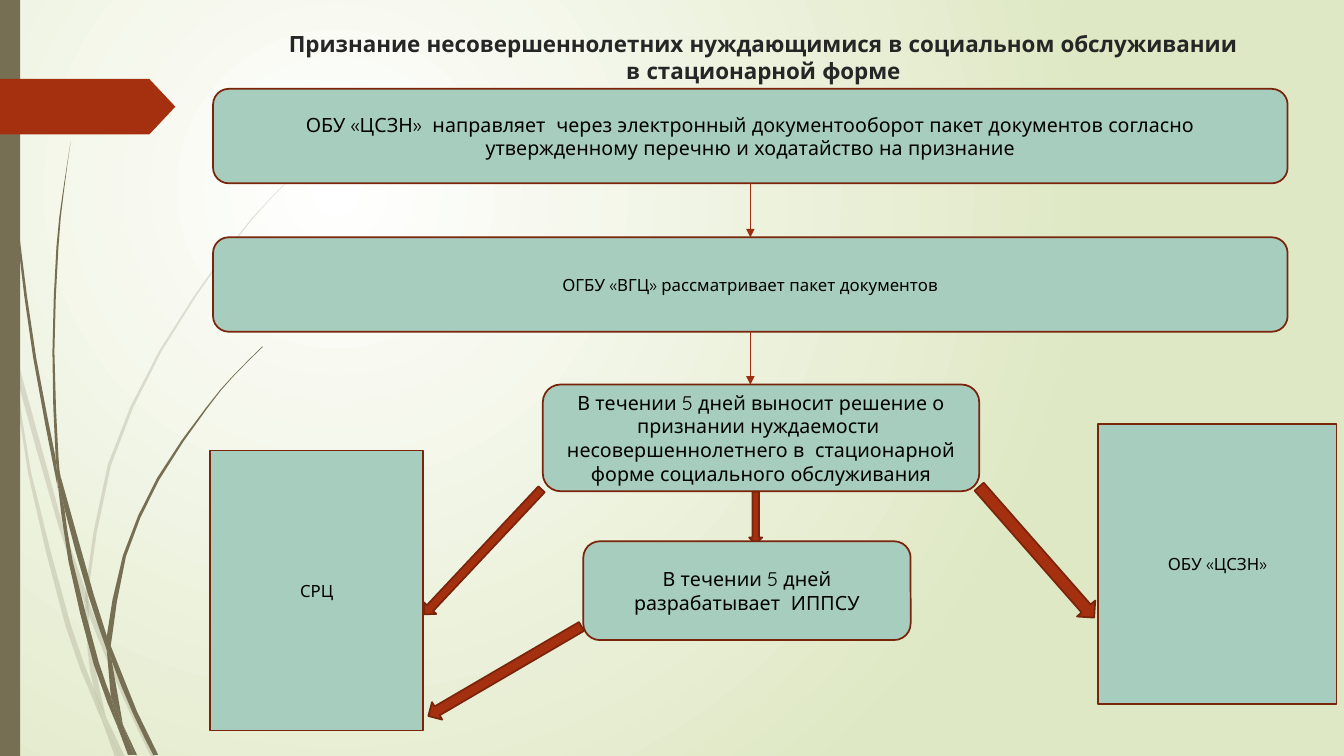
from dataclasses import dataclass

from lxml.etree import SubElement
from pptx import Presentation
from pptx.dml.color import RGBColor as RGB
from pptx.enum.shapes import MSO_CONNECTOR as LINK, MSO_SHAPE as KIND
from pptx.enum.text import MSO_ANCHOR as ANCHOR, PP_ALIGN as ALIGN
from pptx.oxml.ns import qn
from pptx.util import Cm, Pt


@dataclass
class Theme:
    font: str = "Quicksand"
    pale: RGB = RGB(0xFF, 0xFF, 0xFF)
    lime: RGB = RGB(0xDF, 0xE8, 0xC4)
    olive: RGB = RGB(0x76, 0x6F, 0x54)
    rust: RGB = RGB(0xA5, 0x30, 0x10)
    edge: RGB = RGB(0x7A, 0x24, 0x0C)
    wire: RGB = RGB(0x9E, 0x2E, 0x0F)
    mint: RGB = RGB(0xA6, 0xCD, 0xBD)
    head: RGB = RGB(0x26, 0x26, 0x26)
    ink: RGB = RGB(0, 0, 0)
    big: int = 16
    mid: int = 14
    small: int = 12


theme = Theme()


def paint(shape, fill, line=None):
    shape.shadow.inherit = False
    shape.fill.solid()
    shape.fill.fore_color.rgb = fill
    if line is None:
        shape.line.fill.background()
    else:
        shape.line.color.rgb = line
        shape.line.width = Pt(1.25)


def write(shape, text, size, color, bold=False):
    frame = shape.text_frame
    frame.word_wrap = True
    frame.text = text
    para = frame.paragraphs[0]
    para.alignment = ALIGN.CENTER
    font = para.runs[0].font
    font.name, font.size, font.bold = theme.font, Pt(size), bold
    font.color.rgb = color


deck = Presentation()
deck.slide_width, deck.slide_height = Cm(33.87), Cm(19.05)
slide = deck.slides.add_slide(deck.slide_layouts[6])
shapes = slide.shapes

# Background: a round glow in the upper left
back = slide.background.fill
back.gradient()
for stop, color, place in zip(back.gradient_stops, (theme.pale, theme.lime), (0, 1)):
    stop.color.rgb = color
    stop.position = place
grad = slide.element.find(".//" + qn("a:gradFill"))
grad.remove(grad.find(qn("a:lin")))
glow = SubElement(grad, qn("a:path"), path="circle")
SubElement(glow, qn("a:fillToRect"), l="50000", t="50000", r="100000", b="100000")

# Grass pieces: both edges downwards, in 1/100 inch
faint = [
    ([(0, 282), (9, 322), (11, 350)], [(0, 299), (10, 344), (11, 350)]),
    ([(14, 345), (62, 520), (85, 586)], [(14, 345), (17, 376), (58, 522), (84, 599)]),
    ([(88, 596), (92, 607), (127, 692), (155, 751)],
     [(88, 596), (88, 610), (123, 694), (150, 751)]),
    ([(105, 711), (124, 751)], [(105, 711), (119, 751)]),
    ([(11, 350), (17, 376), (31, 469), (70, 619), (93, 683), (101, 714)],
     [(11, 350), (28, 470), (65, 621), (92, 693), (101, 714)]),
    ([(84, 599), (88, 608), (91, 646), (105, 711)],
     [(84, 599), (87, 646), (93, 683), (105, 711)]),
    ([(312, 153), (268, 198), (229, 245), (160, 349), (110, 462), (88, 584), (88, 596)],
     [(312, 153), (268, 197), (228, 244), (158, 348), (107, 461), (85, 584), (88, 596)]),
    ([(101, 714), (119, 751)], [(101, 714), (114, 751)]),
    ([(85, 586), (88, 596), (88, 610)], [(85, 586), (84, 599), (88, 608)]),
    ([(93, 683), (105, 711), (119, 751)], [(93, 683), (101, 714), (119, 751)]),
]
solid = [
    ([(4, 0), (8, 109), (19, 232), (36, 355), (55, 453), (57, 481)],
     [(3, 0), (7, 110), (17, 233), (33, 355), (56, 477), (57, 481)]),
    ([(60, 472), (93, 590), (106, 631), (106, 645)],
     [(60, 472), (64, 505), (88, 592), (106, 645)]),
    ([(110, 641), (136, 706), (157, 749)],
     [(110, 641), (111, 656), (132, 708), (152, 749)]),
    ([(57, 477), (64, 505), (72, 556), (98, 657), (110, 691), (117, 722)],
     [(57, 477), (68, 557), (93, 659), (117, 722)]),
    ([(70, 141), (63, 193), (58, 245), (54, 349), (58, 453), (60, 472)],
     [(70, 141), (62, 193), (56, 245), (52, 349), (55, 449), (60, 472)]),
    ([(122, 719), (136, 749)], [(122, 719), (133, 749)]),
    ([(55, 449), (60, 472), (64, 505)], [(55, 449), (57, 477), (64, 505)]),
    ([(261, 344), (231, 374), (205, 406), (158, 476), (125, 552), (111, 633), (110, 641)],
     [(260, 344), (231, 373), (204, 405), (156, 474), (122, 551), (106, 631), (110, 641)]),
    ([(117, 722), (131, 749)], [(117, 722), (127, 749)]),
    ([(106, 645), (111, 656), (122, 719)], [(106, 645), (110, 691), (122, 719)]),
    ([(106, 631), (110, 641), (111, 656)], [(106, 631), (106, 645), (111, 656)]),
    ([(110, 691), (122, 719), (133, 749)], [(110, 691), (117, 722), (130, 749)]),
]
for alpha, pieces in ((20, faint), (100, solid)):
    for sides in pieces:
        ring = []
        for side, turn in zip(sides, (1, -1)):
            # Catmull-Rom curve with one point between neighbours
            pts = [side[0], *side, side[-1]]
            rim = []
            for a, b, c, d in zip(pts, pts[1:], pts[2:], pts[3:]):
                rim.append((10 * b[0], 10 * b[1]))
                if len(side) > 3:
                    rim.append(tuple((9 * q + 9 * r - p - s) * 5 / 8
                                     for p, q, r, s in zip(a, b, c, d)))
            rim.append((10 * side[-1][0], 10 * side[-1][1]))
            ring += rim[::turn]
        pen = shapes.build_freeform(*ring[0], scale=Cm(2.54) / 1000)
        pen.add_line_segments(ring[1:], close=True)
        blade = pen.convert_to_shape()
        paint(blade, theme.olive)
        tint = blade.element.spPr.find(".//" + qn("a:srgbClr"))
        SubElement(tint, qn("a:alpha"), val=str(alpha * 1000))

# Side bar and page tag
bar = shapes.add_shape(KIND.RECTANGLE, 0, 0, Cm(0.51), Cm(19.05))
paint(bar, theme.olive)
tag = shapes.add_shape(KIND.PENTAGON, 0, Cm(1.99), Cm(4.42), Cm(1.4))
tag.adjustments[0] = 0.47
paint(tag, theme.rust)

# Title
title = shapes.add_textbox(Cm(6.83), Cm(0.64), Cm(24.82), Cm(1.55))
write(title, "Признание несовершеннолетних нуждающимися в социальном обслуживании "
      "в стационарной форме", theme.big, theme.head, True)

# Boxes and block arrows: kind, left, top, width, height, turn, type size, text
soft, hard, down = KIND.ROUNDED_RECTANGLE, KIND.RECTANGLE, KIND.DOWN_ARROW
parts = [
    (soft, 5.37, 2.24, 27.08, 2.38, 0, theme.mid,
     "ОБУ «ЦСЗН»  направляет  через электронный документооборот пакет документов "
     "согласно утвержденному перечню и ходатайство на признание"),
    (soft, 5.37, 5.98, 27.08, 2.38, 0, theme.small,
     "ОГБУ «ВГЦ» рассматривает пакет документов"),
    (soft, 13.68, 9.69, 11, 2.69, 0, theme.mid,
     "В течении 5 дней выносит решение о признании нуждаемости  "
     "несовершеннолетнего в  стационарной форме социального обслуживания"),
    (hard, 27.68, 10.69, 6, 7.06, 0, theme.small, "ОБУ «ЦСЗН»"),
    (hard, 5.3, 11.35, 5.37, 7.06, 0, theme.small, "СРЦ"),
    (KIND.RIGHT_ARROW, 23.93, 13.61, 4.39, 0.61, 48.7, 0, ""),
    (KIND.LEFT_ARROW, 10.01, 13.69, 4.32, 0.43, 313.2, 0, ""),
    (down, 18.88, 12.39, 0.33, 1.32, 0, 0, ""),
    (soft, 14.7, 13.64, 8.25, 2.49, 0, theme.mid,
     "В течении 5 дней разрабатывает  ИППСУ"),
    (down, 12.47, 14.68, 0.51, 4.47, 59.7, 0, ""),
]
made = []
for kind, *spot, turn, size, text in parts:
    part = shapes.add_shape(kind, *map(Cm, spot))
    part.rotation = turn
    paint(part, theme.mint if text else theme.rust, theme.edge)
    if text:
        part.text_frame.vertical_anchor = ANCHOR.MIDDLE
        write(part, text, size, theme.ink)
    made.append(part)

# Thin arrows between the upper boxes
send, review, decide = made[:3]
mid = send.left + send.width // 2
for upper, lower in ((send, review), (review, decide)):
    link = shapes.add_connector(LINK.STRAIGHT, mid, upper.top + upper.height,
                                mid, lower.top)
    link.begin_connect(upper, 2)
    if lower is review:
        link.end_connect(lower, 0)
    link.line.color.rgb = theme.wire
    link.line.width = Pt(0.75)
    wire = link.element.spPr.find(qn("a:ln"))
    SubElement(wire, qn("a:tailEnd"), type="triangle")
    SubElement(link.element.spPr, qn("a:effectLst"))

deck.save("out.pptx")
